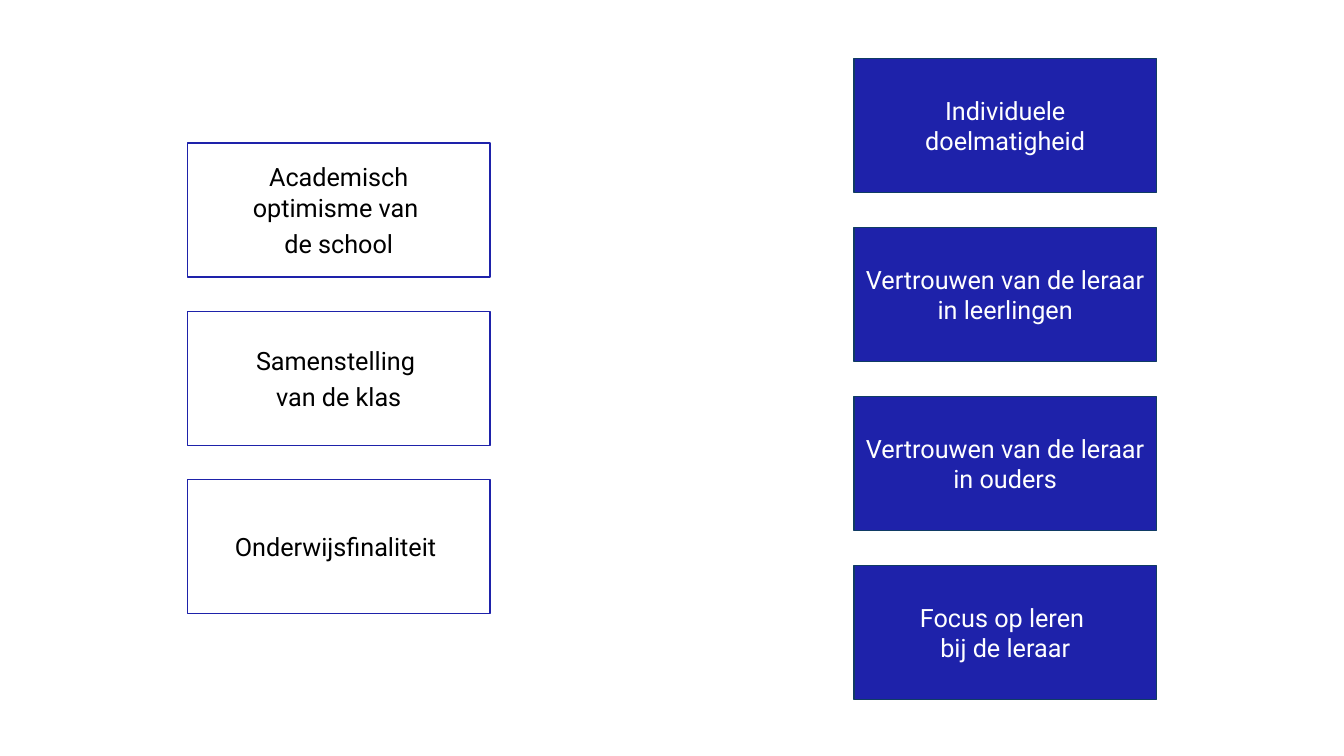
from pptx import Presentation
from pptx.dml.color import RGBColor
from pptx.enum.shapes import MSO_SHAPE
from pptx.enum.text import MSO_ANCHOR, PP_ALIGN
from pptx.util import Inches, Pt

COLORS = {
    "white": "FFFFFF",
    "black": "000000",
    "blue": "1E22AA",
    "navy": "103C64",
}


def rgb(name):
    return RGBColor.from_string(COLORS[name])


prs = Presentation()
prs.slide_width, prs.slide_height = Inches(13.33), Inches(7.5)
s = prs.slides.add_slide(prs.slide_layouts[6])

# Two columns: school and class features, teacher features
columns = [
    {
        "left": 1.86, "top": 1.42, "pitch": 1.67,
        "fill": "white", "line": "blue", "text": "black",
        "margins": (0.2, 0.2), "after": 4.5,
        "boxes": [
            ["Academisch optimisme van ", "de school"],
            ["Samenstelling ", "van de klas"],
            ["Onderwijsfinaliteit "],
        ],
    },
    {
        "left": 8.47, "top": 0.58, "pitch": 1.677,
        "fill": "blue", "line": "navy", "text": "white",
        "margins": (0.1, 0.05), "after": 0,
        "boxes": [
            ["Individuele doelmatigheid"],
            ["Vertrouwen van de leraar in leerlingen"],
            ["Vertrouwen van de leraar in ouders"],
            ["Focus op leren ", "bij de leraar"],
        ],
    },
]

for col in columns:
    for row, lines in enumerate(col["boxes"]):
        # Box
        sp = s.shapes.add_shape(
            MSO_SHAPE.RECTANGLE,
            Inches(col["left"]), Inches(col["top"] + row * col["pitch"]),
            Inches(3), Inches(1.33))
        sp.shadow.inherit = False
        sp.fill.solid()
        sp.fill.fore_color.rgb = rgb(col["fill"])
        sp.line.color.rgb = rgb(col["line"])
        sp.line.width = Pt(1)

        # Text
        tf = sp.text_frame
        side, edge = (Inches(m) for m in col["margins"])
        frame_format = {
            "word_wrap": True, "vertical_anchor": MSO_ANCHOR.MIDDLE,
            "margin_left": side, "margin_right": side,
            "margin_top": edge, "margin_bottom": edge,
        }
        for name, value in frame_format.items():
            setattr(tf, name, value)
        for i, line in enumerate(lines):
            p = tf.paragraphs[0] if i == 0 else tf.add_paragraph()
            p.alignment = PP_ALIGN.CENTER
            p.space_after = Pt(col["after"])
            r = p.add_run()
            r.text = line
            r.font.name = "Roboto"
            r.font.size = Pt(18)
            r.font.color.rgb = rgb(col["text"])

prs.save("out.pptx")
